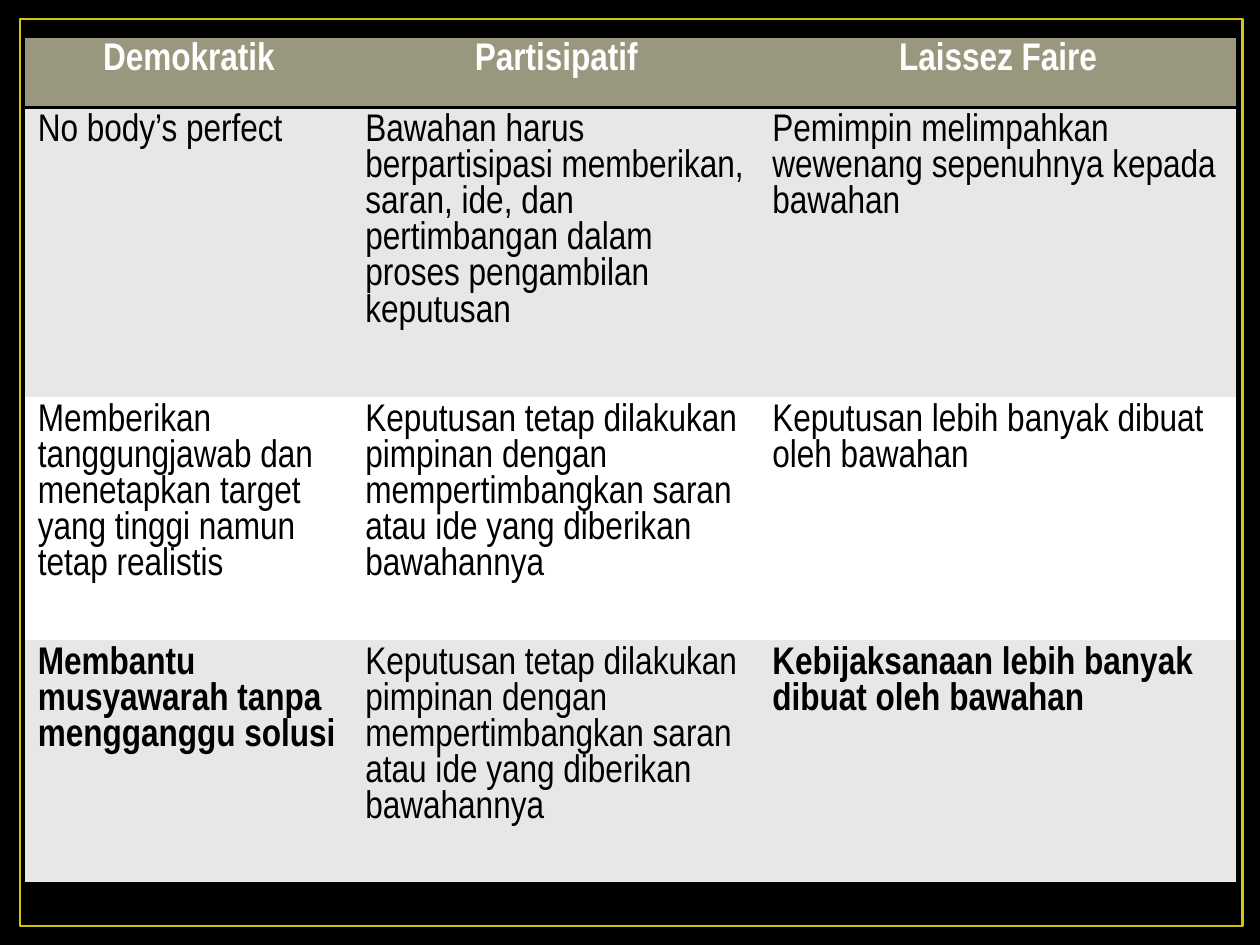
from lxml import etree
from pptx import Presentation
from pptx.dml.color import RGBColor
from pptx.enum import shapes, text
from pptx.oxml import ns
from pptx.util import Pt

BLACK = RGBColor(0x00, 0x00, 0x00)
WHITE = RGBColor(0xFF, 0xFF, 0xFF)
GOLD = RGBColor(0xCF, 0xC6, 0x0D)
OLIVE = RGBColor(0x99, 0x98, 0x7F)
GREY = RGBColor(0xE7, 0xE7, 0xE7)
PLAIN = "{2D5ABB26-0587-4C30-8999-92F81FD0307C}"


def write(cell, words, color=BLACK, bold=False, align=text.PP_ALIGN.LEFT):
    para = cell.text_frame.paragraphs[0]
    para.alignment = align
    run = para.add_run()
    run.text = words
    run.font.name = "Arial Narrow"
    run.font.size = Pt(22)
    run.font.bold = bold
    run.font.color.rgb = color


def rule(cell, tags):
    props = cell._tc.get_or_add_tcPr()
    for spot, tag in enumerate(tags):
        line = etree.Element(ns.qn(tag), w=str(Pt(2)))
        fill = etree.SubElement(line, ns.qn("a:solidFill"))
        etree.SubElement(fill, ns.qn("a:srgbClr"), val=str(BLACK))
        props.insert(spot, line)


deck = Presentation()
deck.slide_width, deck.slide_height = Pt(720), Pt(540)
slide = deck.slides.add_slide(deck.slide_layouts[6])
slide.background.fill.solid()
slide.background.fill.fore_color.rgb = BLACK

frame = slide.shapes.add_shape(
    shapes.MSO_SHAPE.RECTANGLE, Pt(11.5), Pt(10.8), Pt(698.4), Pt(518.4))
frame.shadow.inherit = False
frame.fill.background()
frame.line.color.rgb = GOLD
frame.line.width = Pt(1.5)

decide = ("Keputusan tetap dilakukan pimpinan dengan mempertimbangkan saran "
          "atau ide yang diberikan bawahannya")
rows = [
    ["Demokratik", "Partisipatif", "Laissez Faire"],
    ["No body’s perfect",
     "Bawahan harus berpartisipasi memberikan, saran, ide, dan pertimbangan "
     "dalam proses pengambilan keputusan",
     "Pemimpin melimpahkan wewenang sepenuhnya kepada bawahan"],
    ["Memberikan tanggungjawab dan menetapkan target yang tinggi namun "
     "tetap realistis",
     decide,
     "Keputusan lebih banyak dibuat oleh bawahan"],
    ["Membantu musyawarah tanpa mengganggu solusi",
     decide,
     "Kebijaksanaan lebih banyak dibuat oleh bawahan"],
]
widths = [187.2, 232.6, 272.2]
heights = [40.5, 165.6, 139, 139]
fills = [OLIVE, GREY, WHITE, GREY]
edges = {0: ["a:lnT", "a:lnB"], 3: ["a:lnB"]}

table = slide.shapes.add_table(
    len(rows), len(widths), Pt(14.4), Pt(20.8),
    Pt(sum(widths)), Pt(sum(heights))).table
table._tbl.tblPr.find(ns.qn("a:tableStyleId")).text = PLAIN
table.horz_banding = False
for col, width in zip(table.columns, widths):
    col.width = Pt(width)

for r, words in enumerate(rows):
    table.rows[r].height = Pt(heights[r])
    for c, word in enumerate(words):
        cell = table.cell(r, c)
        cell.margin_left = cell.margin_right = Pt(7.2)
        cell.margin_top = cell.margin_bottom = Pt(3.6)
        cell.fill.solid()
        cell.fill.fore_color.rgb = fills[r]
        rule(cell, edges.get(r, []))
        if r == 0:
            write(cell, word, color=WHITE, bold=True,
                  align=text.PP_ALIGN.CENTER)
        else:
            write(cell, word, bold=r == 3 and c != 1)

deck.save("out.pptx")
